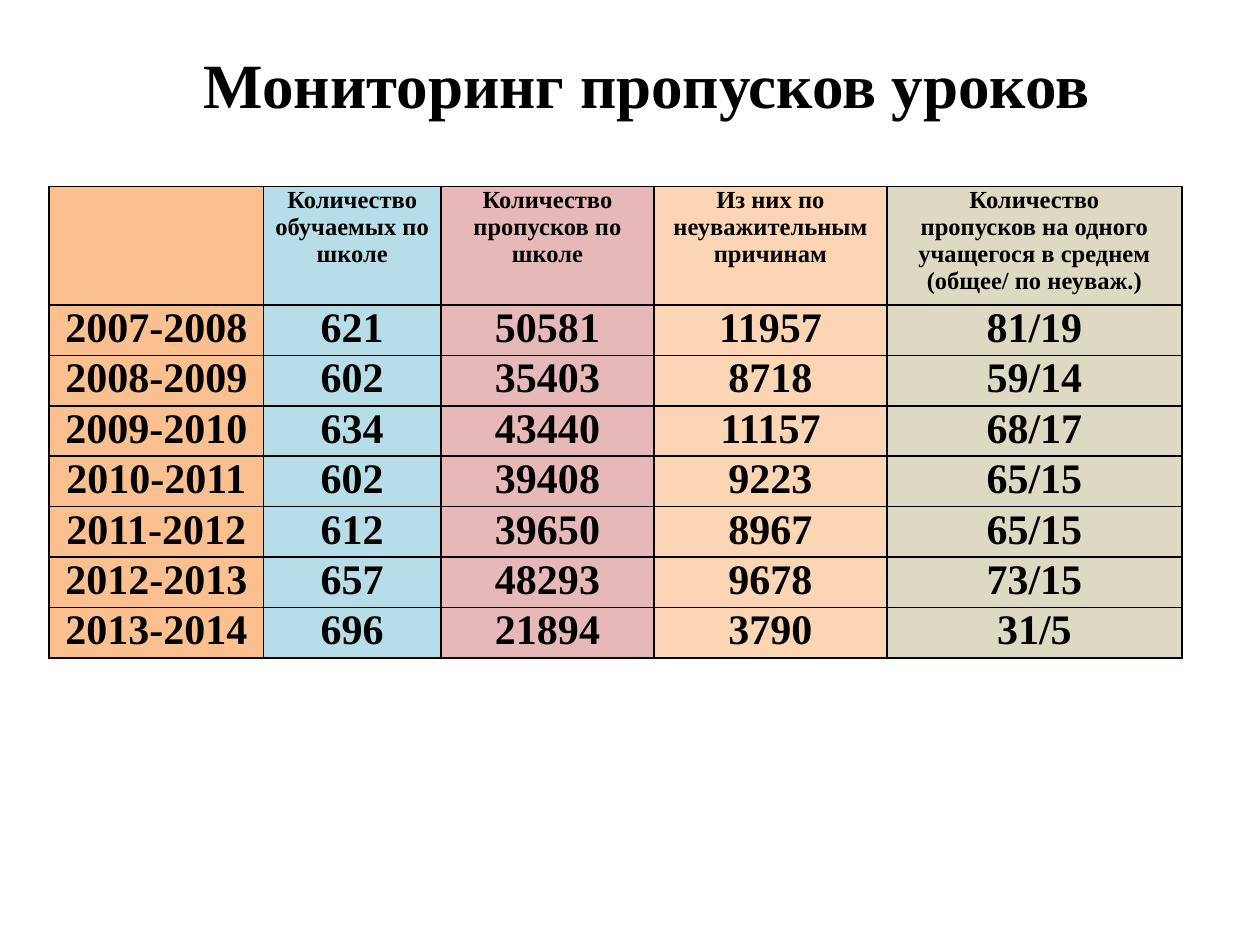
import pptx
import pptx.util
import pptx.dml.color
import pptx.enum.text
import pptx.oxml

TITLE = "Мониторинг пропусков уроков "
HEADS = [
    [],
    ["Количество обучаемых по школе"],
    ["Количество пропусков по школе"],
    ["Из них по неуважительным причинам"],
    ["Количество", "пропусков на одного учащегося в среднем (общее/ по неуваж.)"],
]
YEARS = [
    ("2007-2008", "621", "50581", "11957", "81/19"),
    ("2008-2009", "602", "35403", "8718", "59/14"),
    ("2009-2010", "634", "43440", "11157", "68/17"),
    ("2010-2011", "602", "39408", "9223", "65/15"),
    ("2011-2012", "612", "39650", "8967", "65/15"),
    ("2012-2013", "657", "48293", "9678", "73/15"),
    ("2013-2014", "696", "21894", "3790", "31/5"),
]
WIDTHS = [1.7, 1.41, 1.69, 1.85, 2.34]
HEAD, ROW = 0.94, 0.34
SPACED = 3
COLORS = {
    "text": "000000",
    "year": "FAC090",
    "pupils": "B7DEE8",
    "missed": "E6B9B8",
    "unexcused": "FCD5B5",
    "average": "DDD9C3",
}
FILLS = ["year", "pupils", "missed", "unexcused", "average"]
FONT = "Times New Roman"

Inches = pptx.util.Inches
Pt = pptx.util.Pt


def color(name):
    return pptx.dml.color.RGBColor.from_string(COLORS[name])


def write(frame, lines, size, after=0):
    for i, line in enumerate(lines):
        para = frame.paragraphs[0] if i == 0 else frame.add_paragraph()
        para.alignment = pptx.enum.text.PP_ALIGN.CENTER
        para.space_after = Pt(after)
        run = para.add_run()
        run.text = line
        run.font.name = FONT
        run.font.size = Pt(size)
        run.font.bold = True
        run.font.color.rgb = color("text")


def style(cell, name):
    cell.margin_left = cell.margin_right = Inches(0.07)
    cell.margin_top = cell.margin_bottom = 0
    props = cell._tc.get_or_add_tcPr()
    for side in ("lnL", "lnR", "lnT", "lnB"):
        props.append(pptx.oxml.parse_xml(
            f'<a:{side} xmlns:a="http://schemas.openxmlformats.org/drawingml/2006/main" '
            f'w="{Pt(1)}"><a:solidFill><a:srgbClr val="{COLORS["text"]}"/>'
            f'</a:solidFill></a:{side}>'))
    cell.fill.solid()
    cell.fill.fore_color.rgb = color(name)


def main():
    deck = pptx.Presentation()
    deck.slide_width, deck.slide_height = Inches(10), Inches(7.5)
    slide = deck.slides.add_slide(deck.slide_layouts[5])

    title = slide.shapes.title
    title.left, title.top = Inches(1.48), Inches(0.31)
    title.width, title.height = Inches(7.43), Inches(0.71)
    frame = title.text_frame
    frame.word_wrap = False
    frame.auto_size = pptx.enum.text.MSO_AUTO_SIZE.SHAPE_TO_FIT_TEXT
    frame.vertical_anchor = pptx.enum.text.MSO_ANCHOR.MIDDLE
    write(frame, [TITLE], 36)

    rows = [HEADS] + [[[value] for value in year] for year in YEARS]
    table = slide.shapes.add_table(
        len(rows), len(WIDTHS), Inches(0.39), Inches(1.48),
        Inches(sum(WIDTHS)), Inches(HEAD + ROW * len(YEARS))).table
    for col, width in zip(table.columns, WIDTHS):
        col.width = Inches(width)
    for r, row in enumerate(rows):
        table.rows[r].height = Inches(ROW if r else HEAD)
        for c, lines in enumerate(row):
            cell = table.cell(r, c)
            style(cell, FILLS[c])
            after = 10 if r <= SPACED and len(lines) == 1 else 0
            write(cell.text_frame, lines, 24 if r else 14, after)

    deck.save("out.pptx")


if __name__ == "__main__":
    main()
